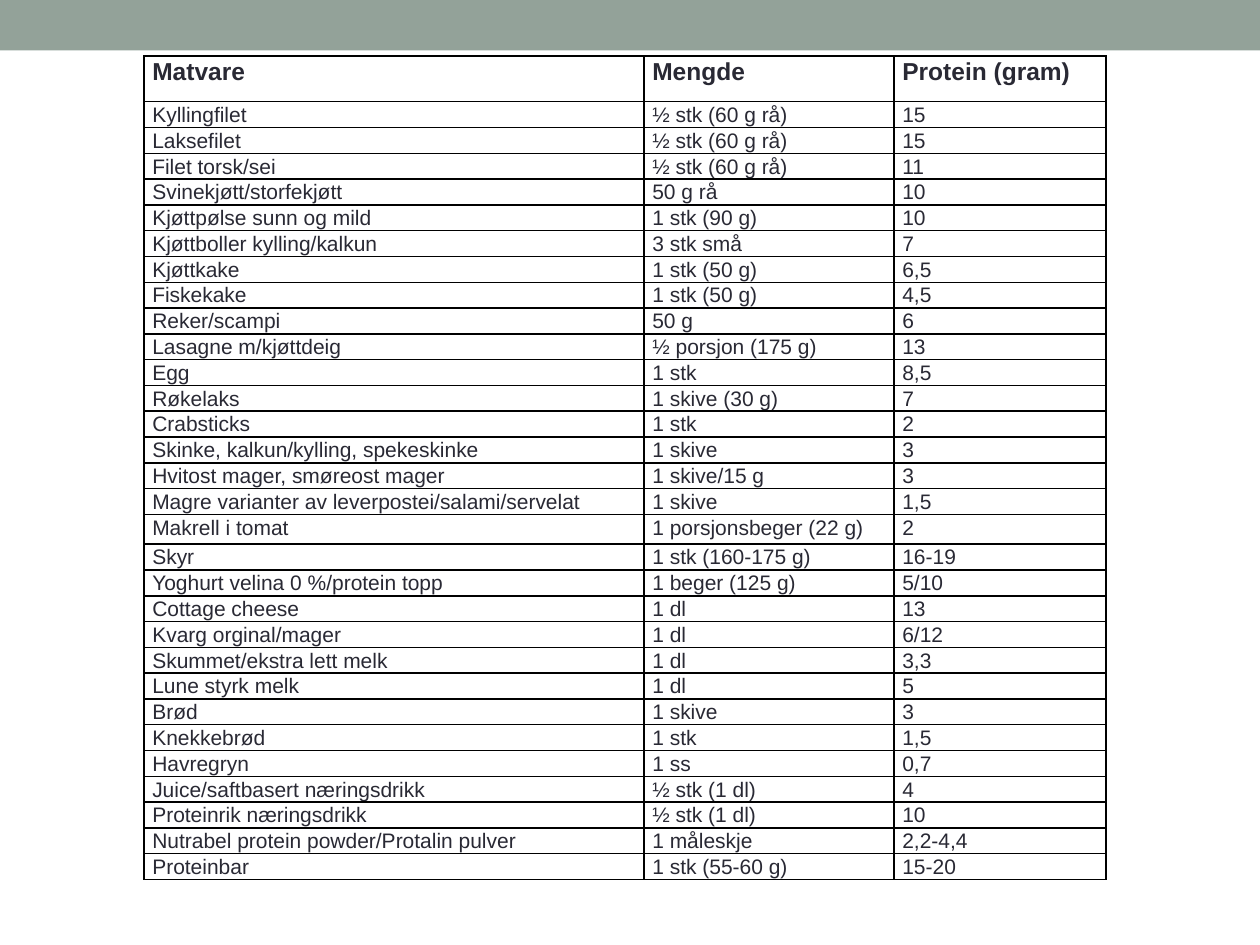
from pptx import Presentation
from pptx.dml.color import RGBColor
from pptx.enum.shapes import MSO_SHAPE
from pptx.oxml import parse_xml
from pptx.oxml.ns import nsdecls
from pptx.util import Cm, Pt

COLORS = {"banner": "93A299", "text": "292934", "border": "000000"}
FONT = "Arial"
COL_WIDTHS = [10.08, 5.04, 4.28]
HEADER_HEIGHT, ROW_HEIGHT, TALL_ROW_HEIGHT = 0.92, 0.52, 0.6
TALL_FOOD = "Makrell i tomat"

HEADER = ("Matvare", "Mengde", "Protein (gram)")
FOODS = [
    ("Kyllingfilet", "½ stk (60 g rå)", "15"),
    ("Laksefilet", "½ stk (60 g rå)", "15"),
    ("Filet torsk/sei", "½ stk (60 g rå)", "11"),
    ("Svinekjøtt/storfekjøtt", "50 g rå", "10"),
    ("Kjøttpølse sunn og mild", "1 stk (90 g)", "10"),
    ("Kjøttboller kylling/kalkun", "3 stk små", "7"),
    ("Kjøttkake", "1 stk (50 g)", "6,5"),
    ("Fiskekake", "1 stk (50 g)", "4,5"),
    ("Reker/scampi", "50 g", "6"),
    ("Lasagne m/kjøttdeig", "½ porsjon (175 g)", "13"),
    ("Egg", "1 stk", "8,5"),
    ("Røkelaks", "1 skive (30 g)", "7"),
    ("Crabsticks", "1 stk", "2"),
    ("Skinke, kalkun/kylling, spekeskinke", "1 skive", "3"),
    ("Hvitost mager, smøreost mager", "1 skive/15 g", "3"),
    ("Magre varianter av leverpostei/salami/servelat", "1 skive", "1,5"),
    (TALL_FOOD, "1 porsjonsbeger (22 g)", "2"),
    ("Skyr", "1 stk (160-175 g)", "16-19"),
    ("Yoghurt velina 0 %/protein topp", "1 beger (125 g)", "5/10"),
    ("Cottage cheese", "1 dl", "13"),
    ("Kvarg orginal/mager", "1 dl", "6/12"),
    ("Skummet/ekstra lett melk", "1 dl", "3,3"),
    ("Lune styrk melk", "1 dl", "5"),
    ("Brød", "1 skive", "3"),
    ("Knekkebrød", "1 stk", "1,5"),
    ("Havregryn", "1 ss", "0,7"),
    ("Juice/saftbasert næringsdrikk", "½ stk (1 dl)", "4"),
    ("Proteinrik næringsdrikk", "½ stk (1 dl)", "10"),
    ("Nutrabel protein powder/Protalin pulver", "1 måleskje", "2,2-4,4"),
    ("Proteinbar", "1 stk (55-60 g)", "15-20"),
]


def add_banner(s, left, top, width, height):
    sp = s.shapes.add_shape(MSO_SHAPE.RECTANGLE, left, top, width, height)
    sp.shadow.inherit = False
    sp.fill.solid()
    sp.fill.fore_color.rgb = RGBColor.from_string(COLORS["banner"])
    sp.line.fill.background()


def add_borders(cell):
    """Draw a 1 pt line on all four sides; call before setting the fill."""
    tcPr = cell._tc.get_or_add_tcPr()
    for side in ("lnL", "lnR", "lnT", "lnB"):
        tcPr.append(parse_xml(
            f'<a:{side} {nsdecls("a")} w="{Pt(1)}"><a:solidFill>'
            f'<a:srgbClr val="{COLORS["border"]}"/></a:solidFill></a:{side}>'))


def fill_cell(cell, text, size, bold):
    cell.margin_left = cell.margin_right = Cm(0.17)
    cell.margin_top = cell.margin_bottom = 0
    add_borders(cell)
    cell.fill.background()
    p = cell.text_frame.paragraphs[0]
    p.line_spacing = 1.07
    r = p.add_run()
    r.text = text
    r.font.name = FONT
    r.font.size = Pt(size)
    r.font.bold = bold
    r.font.color.rgb = RGBColor.from_string(COLORS["text"])


def add_protein_table(s, left, top):
    rows = [HEADER] + FOODS
    heights = [HEADER_HEIGHT] + [
        TALL_ROW_HEIGHT if food == TALL_FOOD else ROW_HEIGHT for food, *_ in FOODS]
    table = s.shapes.add_table(len(rows), len(HEADER), left, top,
                               Cm(sum(COL_WIDTHS)), Cm(sum(heights))).table
    table.horz_banding = False
    for col, width in zip(table.columns, COL_WIDTHS):
        col.width = Cm(width)
    for i, (values, height) in enumerate(zip(rows, heights)):
        table.rows[i].height = Cm(height)
        for j, text in enumerate(values):
            fill_cell(table.cell(i, j), text, 12 if i else 14, i == 0)


def main():
    prs = Presentation()
    prs.slide_width, prs.slide_height = Cm(25.4), Cm(19.05)
    s = prs.slides.add_slide(prs.slide_layouts[6])
    add_banner(s, 0, 0, prs.slide_width, Cm(1.02))
    add_protein_table(s, Cm(2.9), Cm(1.13))
    prs.save("out.pptx")


if __name__ == "__main__":
    main()
